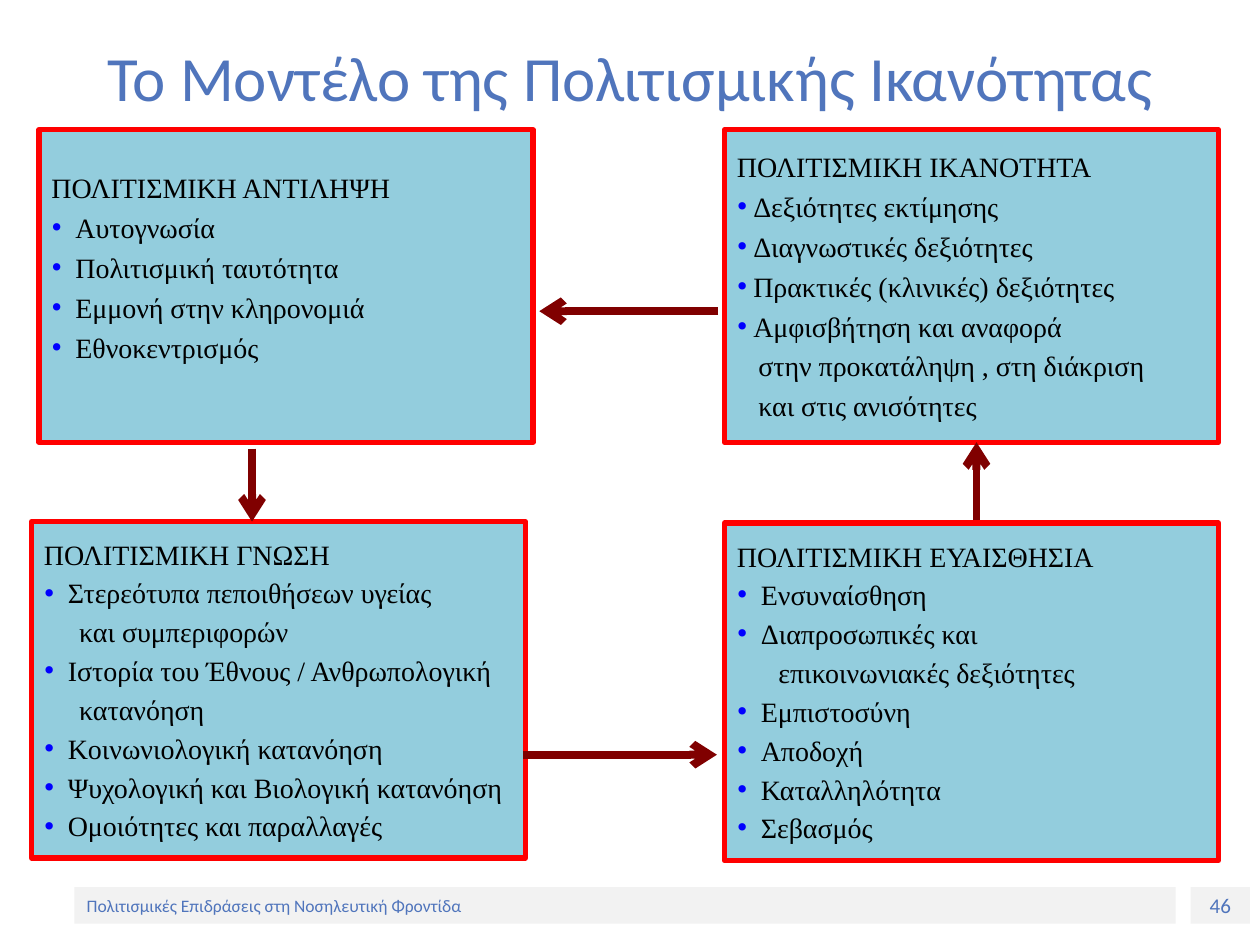
from dataclasses import dataclass

from lxml import etree
from pptx import Presentation
from pptx.dml.color import RGBColor
from pptx.enum.shapes import MSO_CONNECTOR, MSO_SHAPE
from pptx.enum.text import MSO_ANCHOR, MSO_AUTO_SIZE, PP_ALIGN
from pptx.oxml.ns import qn
from pptx.util import Inches, Pt

RECT = MSO_SHAPE.RECTANGLE
STRAIGHT = MSO_CONNECTOR.STRAIGHT
MIDDLE = MSO_ANCHOR.MIDDLE
NO_FIT = MSO_AUTO_SIZE.NONE
LEFT, CENTER = PP_ALIGN.LEFT, PP_ALIGN.CENTER


@dataclass(frozen=True)
class Theme:
    heading_font: str = "Calibri"
    body_font: str = "Times New Roman"
    accent: str = "5075BC"
    ink: str = "000000"
    panel: str = "93CDDD"
    border: str = "FF0000"
    bullet: str = "0000FF"
    arrow: str = "800000"
    band: str = "F2F2F2"
    title_size: float = 36
    body_size: float = 16
    number_size: float = 12
    footer_size: float = 10
    border_width: float = 3
    arrow_width: float = 4.5


THEME = Theme()
WIDTH, HEIGHT = 10, 7.5
PANEL_WIDTH = 3.92
RIGHT_COLUMN = 5.75
TOP_ROW, TOP_HEIGHT = 1.03, 2.48

# Each stage: box, bullet indent, continuation indent, space before,
# extra bottom inset, heading, items (lines after the first continue an item)
STAGES = [
    ((0.31, TOP_ROW, PANEL_WIDTH, TOP_HEIGHT), 0.19, 0.19, 3.6, 0.3,
     "ΠΟΛΙΤΙΣΜΙΚΗ ΑΝΤΙΛΗΨΗ",
     [["Αυτογνωσία"], ["Πολιτισμική ταυτότητα"],
      ["Εμμονή στην κληρονομιά"], ["Εθνοκεντρισμός"]]),
    ((0.25, 4.14, PANEL_WIDTH, 2.67), 0.19, 0.28, 3, 0,
     "ΠΟΛΙΤΙΣΜΙΚΗ ΓΝΩΣΗ",
     [["Στερεότυπα πεποιθήσεων υγείας", "και συμπεριφορών"],
      ["Ιστορία του Έθνους / Ανθρωπολογική", "κατανόηση"],
      ["Κοινωνιολογική κατανόηση"],
      ["Ψυχολογική και Βιολογική κατανόηση"],
      ["Ομοιότητες και παραλλαγές"]]),
    ((RIGHT_COLUMN, TOP_ROW, PANEL_WIDTH, TOP_HEIGHT), 0.13, 0.17, 3.6, 0,
     "ΠΟΛΙΤΙΣΜΙΚΗ ΙΚΑΝΟΤΗΤΑ",
     [["Δεξιότητες εκτίμησης"], ["Διαγνωστικές δεξιότητες"],
      ["Πρακτικές (κλινικές) δεξιότητες"],
      ["Αμφισβήτηση και αναφορά", "στην προκατάληψη , στη διάκριση",
       "και στις ανισότητες"]]),
    ((RIGHT_COLUMN, 4.15, PANEL_WIDTH, 2.68), 0.19, 0.33, 3, 0,
     "ΠΟΛΙΤΙΣΜΙΚΗ ΕΥΑΙΣΘΗΣΙΑ",
     [["Ενσυναίσθηση"], ["Διαπροσωπικές και", "επικοινωνιακές δεξιότητες"],
      ["Εμπιστοσύνη"], ["Αποδοχή"], ["Καταλληλότητα"], ["Σεβασμός"]]),
]

# Start and end of each step of the cycle
STEPS = [
    ((2, 3.56), (2, 4.14)),
    ((4.15, 5.99), (5.69, 5.99)),
    ((5.7, 2.47), (4.28, 2.47)),
    ((7.75, 4.13), (7.75, 3.51)),
]


def write(paragraph, text, *, font, size, color, align=LEFT, before=0,
          indent=0, bullet=False):
    """Fill a paragraph; a bullet hangs in front of the indent."""
    run = paragraph.add_run()
    run.text = text
    run.font.name = font
    run.font.size = Pt(size)
    run.font.color.rgb = RGBColor.from_string(color)
    paragraph.alignment = align
    paragraph.space_before = Pt(before)
    properties = paragraph._p.get_or_add_pPr()
    properties.set("marL", str(Inches(indent)))
    properties.set("indent", str(-Inches(indent) if bullet else 0))
    if bullet:
        tint = etree.SubElement(properties, qn("a:buClr"))
        etree.SubElement(tint, qn("a:srgbClr"), val=THEME.bullet)
        etree.SubElement(properties, qn("a:buSzPct"), val="110000")
        etree.SubElement(properties, qn("a:buFont"), typeface=font)
        etree.SubElement(properties, qn("a:buChar"), char="•")


def add_panel(slide, box, fill, border=None):
    panel = slide.shapes.add_shape(RECT, *map(Inches, box))
    panel.shadow.inherit = False
    panel.fill.solid()
    panel.fill.fore_color.rgb = RGBColor.from_string(fill)
    if border:
        panel.line.color.rgb = RGBColor.from_string(border)
        panel.line.width = Pt(THEME.border_width)
    else:
        panel.line.fill.background()
    panel.text_frame.word_wrap = True
    panel.text_frame.vertical_anchor = MIDDLE
    return panel.text_frame


def add_title(slide, box, text):
    title = slide.shapes.title
    title.left, title.top, title.width, title.height = map(Inches, box)
    frame = title.text_frame
    frame.auto_size = NO_FIT
    frame.vertical_anchor = MIDDLE
    write(frame.paragraphs[0], text, font=THEME.heading_font,
          size=THEME.title_size, color=THEME.accent, align=CENTER)


def add_stage(slide, box, bullet_indent, rest_indent, before, lift,
              heading, items):
    frame = add_panel(slide, box, THEME.panel, THEME.border)
    frame.margin_bottom = Inches(0.05 + lift)
    style = dict(font=THEME.body_font, size=THEME.body_size,
                 color=THEME.ink, before=before)
    write(frame.paragraphs[0], heading, **style)
    for first, *rest in items:
        write(frame.add_paragraph(), first, indent=bullet_indent,
              bullet=True, **style)
        for line in rest:
            write(frame.add_paragraph(), line, indent=rest_indent, **style)


def add_step(slide, start, end):
    arrow = slide.shapes.add_connector(STRAIGHT, *map(Inches, start + end))
    arrow.line.color.rgb = RGBColor.from_string(THEME.arrow)
    arrow.line.width = Pt(THEME.arrow_width)
    etree.SubElement(arrow.line._get_or_add_ln(), qn("a:tailEnd"), type="arrow")
    etree.SubElement(arrow._element.spPr, qn("a:effectLst"))


def add_footer(slide, box, text, number):
    left, top, width, height = box
    number_width, gap = 0.47, 0.12
    text_width = width - number_width - gap
    # Page number
    frame = add_panel(slide, (left + text_width + gap, top, number_width, height),
                      THEME.band)
    write(frame.paragraphs[0], number, font=THEME.heading_font,
          size=THEME.number_size, color=THEME.accent, align=CENTER)
    # Course name
    frame = add_panel(slide, (left, top, text_width, height), THEME.band)
    write(frame.paragraphs[0], text, font=THEME.heading_font,
          size=THEME.footer_size, color=THEME.accent)


def main():
    deck = Presentation()
    deck.slide_width, deck.slide_height = Inches(WIDTH), Inches(HEIGHT)
    title_only = deck.slide_layouts[5]
    slide = deck.slides.add_slide(title_only)
    add_footer(slide, (0.59, 7.04, 9.33, 0.29),
               "Πολιτισμικές Επιδράσεις στη Νοσηλευτική Φροντίδα", "46")
    add_title(slide, (0, -0.02, WIDTH, 1.25),
              "Το Μοντέλο της Πολιτισμικής Ικανότητας")
    for stage in STAGES:
        add_stage(slide, *stage)
    for start, end in STEPS:
        add_step(slide, start, end)
    deck.save("out.pptx")


if __name__ == "__main__":
    main()
